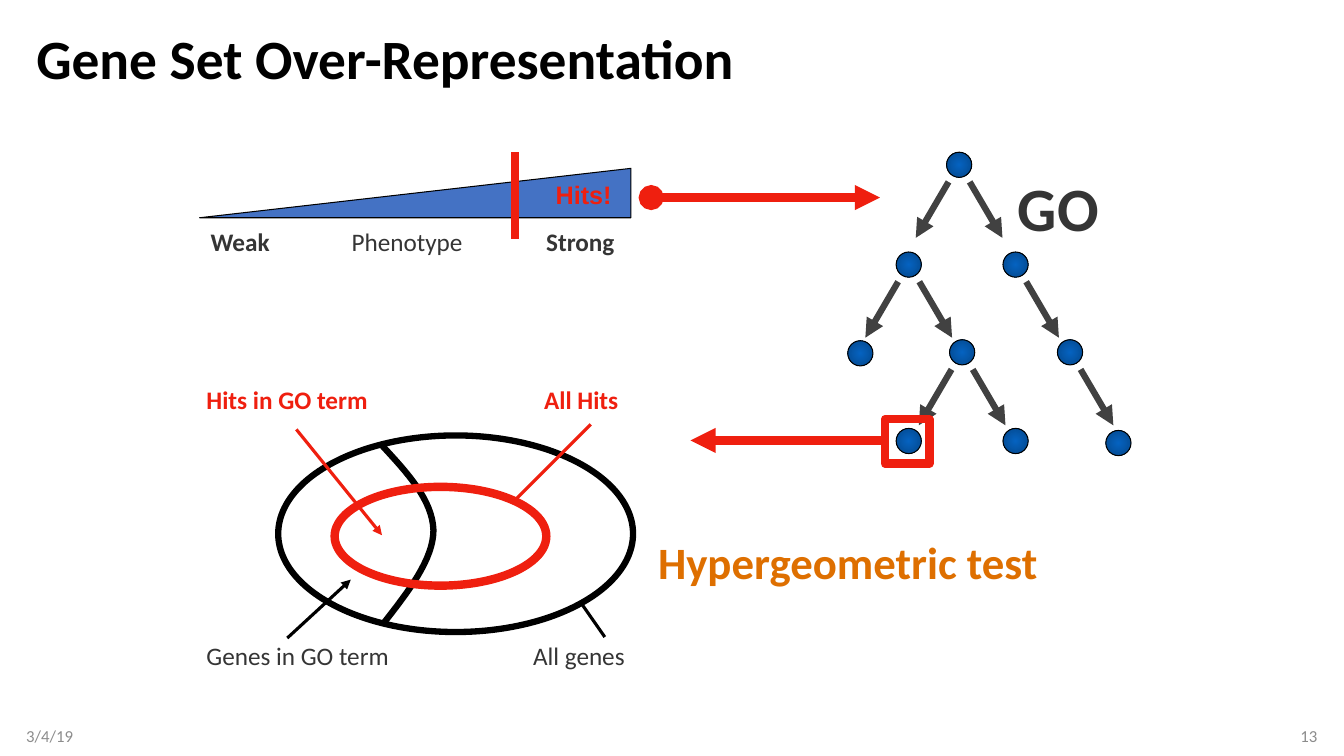
from dataclasses import dataclass

from lxml.etree import SubElement as Sub
from pptx import Presentation
from pptx.dml.color import RGBColor
from pptx.enum.shapes import MSO_CONNECTOR as Link, MSO_SHAPE as Kind
from pptx.enum.text import MSO_ANCHOR as Anchor, MSO_AUTO_SIZE as Fit, PP_ALIGN as Align
from pptx.oxml.ns import qn
from pptx.util import Inches, Pt

# The slide is a grid of square cells, 133.33 columns by 75 rows.
COLS, ROWS = 133.33, 75
CELL = Inches(0.1)
RED, BLACK, DARK, GREY, SLATE = "EF1F0F", "000000", "353535", "8C8C8C", "414141"
DOT = 2.5  # width of a tree node

Point = tuple[float, float]


@dataclass
class Label:
    text: str
    x: float
    y: float
    w: float
    h: float
    size: float = 18
    color: str = DARK
    bold: bool = False
    font: str = "Calibri"
    align: Align = Align.LEFT
    anchor: Anchor = Anchor.TOP
    left: float = 1
    right: float = 1


@dataclass
class Line:
    start: Point
    end: Point
    color: str
    width: float
    tail: str = ""
    head: str = ""


@dataclass
class Form:
    kind: Kind
    x: float
    y: float
    w: float
    h: float
    color: str
    width: float
    fill: str = ""


@dataclass
class Node:
    x: float
    y: float
    sides: tuple[int, ...] = ()  # -1 branches left, 1 branches right


LABELS = [
    Label("3/4/19", 2.6, 71, 30, 4, 12, GREY, anchor=Anchor.MIDDLE, left=0),
    Label("13", 100.7, 71, 30, 4, 12, GREY, align=Align.RIGHT, anchor=Anchor.MIDDLE, right=0),
    Label("Weak", 19.9, 22, 8.2, 4, bold=True),
    Label("Strong", 53.2, 22, 9.6, 4, bold=True),
    Label("Phenotype", 33.9, 22, 13.4, 4),
    Label("Hits!", 54.5, 17.3, 6.8, 3.8, color=RED, bold=True, font="Arial",
          align=Align.CENTER, left=0, right=0),
    Label("GO", 100, 16.4, 11.5, 8.3, 44, bold=True),
    Label("All genes", 51.9, 63, 14.7, 5),
    Label("All Hits", 53, 37.6, 12.6, 5, color=RED, bold=True),
    Label("Hits in GO term", 19.5, 37.6, 24.6, 5, color=RED, bold=True),
    Label("Genes in GO term", 19.5, 63, 26.5, 5),
    Label("Hypergeometric test", 64.3, 52.6, 45.4, 6.4, 32, "DE6F00", True),
]
WEDGE = Form(Kind.RIGHT_TRIANGLE, 19.8, 16.7, 42.8, 4.9, BLACK, 0.75, "4472C4")
GENES = Form(Kind.OVAL, 27.6, 43.2, 35.2, 19.5, BLACK, 4.5)
HITS = Form(Kind.OVAL, 33.2, 48.3, 21, 9.8, RED, 6)
FRAME = Form(Kind.RECTANGLE, 87.8, 41.6, 4.4, 4.4, RED, 6)
LINES = [
    Line((51.1, 15.1), (51.1, 23.7), RED, 6),
    Line((64.6, 19.6), (87.3, 19.6), RED, 6, "triangle", "oval"),
    Line((57.7, 59.9), (60, 63.2), BLACK, 2.25),
    Line((51.2, 49.5), (58.6, 42.1), RED, 2.25),
    Line((28.5, 63.3), (34.8, 57.5), BLACK, 2.25, "triangle"),
    Line((29.4, 42.6), (37.9, 53.1), RED, 2.25, "triangle"),
    Line((87.7, 43.7), (68.5, 43.7), RED, 6, "triangle"),
]
TREE = [
    Node(95.15, 16.35, (-1, 1)),
    Node(90.15, 26.25, (-1, 1)), Node(100.75, 26.25, (1,)),
    Node(85.35, 35.05), Node(95.45, 34.95, (-1, 1)), Node(106.15, 34.95, (1,)),
    Node(90.15, 43.75), Node(100.75, 43.75), Node(110.95, 43.95),
]
TERM = [  # two cubic curves, joined end to end
    ((37.9, 44.2), (40.4, 46.9), (42.9, 49.6), (43, 52.6)),
    ((43, 52.6), (43, 55.5), (40.5, 58.7), (38, 61.9)),
]


def cells(*counts: float) -> list[int]:
    return [round(n * CELL) for n in counts]


def rgb(code: str) -> RGBColor:
    return RGBColor.from_string(code)


def stroke(shape, color: str, width: float) -> None:
    shape.line.color.rgb = rgb(color)
    shape.line.width = Pt(width)


def write(shape, item: Label) -> None:
    frame = shape.text_frame
    frame.word_wrap, frame.auto_size = True, Fit.NONE
    frame.vertical_anchor = item.anchor
    frame.margin_left, frame.margin_right = cells(item.left, item.right)
    frame.text = item.text
    para = frame.paragraphs[0]
    para.alignment = item.align
    font = para.font
    font.name, font.size, font.bold = item.font, Pt(item.size), item.bold
    font.color.rgb = rgb(item.color)


def label(shapes, item: Label) -> None:
    write(shapes.add_textbox(*cells(item.x, item.y, item.w, item.h)), item)


def form(shapes, item: Form):
    shape = shapes.add_shape(item.kind, *cells(item.x, item.y, item.w, item.h))
    shape.shadow.inherit = False
    stroke(shape, item.color, item.width)
    if item.fill:
        shape.fill.solid()
        shape.fill.fore_color.rgb = rgb(item.fill)
    else:
        shape.fill.background()
    return shape


def line(shapes, item: Line) -> None:
    link = shapes.add_connector(Link.STRAIGHT, *cells(*item.start, *item.end))
    stroke(link, item.color, item.width)
    props = link.element.spPr
    edge = props.find(qn("a:ln"))
    for tag, style in (("a:headEnd", item.head), ("a:tailEnd", item.tail)):
        if style:
            Sub(edge, qn(tag), type=style)
    Sub(props, qn("a:effectLst"))


def glow(shape) -> None:
    """Fill with a gradient that spreads from the centre."""
    shape.fill.gradient()
    for stop, code in zip(shape.fill.gradient_stops, ("0563C1", "04478A")):
        stop.color.rgb = rgb(code)
    grad = shape.element.spPr.find(qn("a:gradFill"))
    grad.remove(grad.find(qn("a:lin")))
    route = Sub(grad, qn("a:path"), path="circle")
    Sub(route, qn("a:fillToRect"), {side: "50000" for side in "ltrb"})


def tree(shapes) -> None:
    for node in TREE:
        glow(form(shapes, Form(Kind.OVAL, node.x - DOT / 2, node.y - DOT / 2,
                               DOT, DOT, BLACK, 0.75)))
        for side in node.sides:
            line(shapes, Line((node.x + 1.05 * side, node.y + 1.7),
                              (node.x + 4.3 * side, node.y + 7.25),
                              SLATE, 4.5, "triangle"))


def curve(a: Point, b: Point, c: Point, d: Point, steps: int = 16) -> list[list[int]]:
    """Points along a cubic curve, without its first."""
    spots = []
    for t in (n / steps for n in range(1, steps + 1)):
        u = 1 - t
        parts = (u ** 3, 3 * u * u * t, 3 * u * t * t, t ** 3)
        spots.append(cells(*(sum(k * p[i] for k, p in zip(parts, (a, b, c, d)))
                             for i in (0, 1))))
    return spots


def term(shapes) -> None:
    pen = shapes.build_freeform(*cells(*TERM[0][0]))
    for bend in TERM:
        pen.add_line_segments(curve(*bend), close=False)
    shape = pen.convert_to_shape()
    shape.shadow.inherit = False
    shape.fill.background()
    stroke(shape, BLACK, 4.5)


def main() -> None:
    deck = Presentation()
    deck.slide_width, deck.slide_height = cells(COLS, ROWS)
    shapes = deck.slides.add_slide(deck.slide_layouts[5]).shapes
    head = Label("Gene Set Over-Representation", 2.6, 2.5, 128.1, 7.2, 39.6, BLACK, True,
                 anchor=Anchor.MIDDLE)
    title = shapes.title
    title.left, title.top, title.width, title.height = cells(head.x, head.y, head.w, head.h)
    write(title, head)
    title.text_frame.paragraphs[0].line_spacing = 0.9
    form(shapes, WEDGE).element.spPr.xfrm.set("flipH", "1")
    tree(shapes)
    form(shapes, GENES)
    term(shapes)
    for item in (HITS, FRAME):
        form(shapes, item)
    for item in LINES:
        line(shapes, item)
    for item in LABELS:
        label(shapes, item)
    deck.save("out.pptx")


if __name__ == "__main__":
    main()
